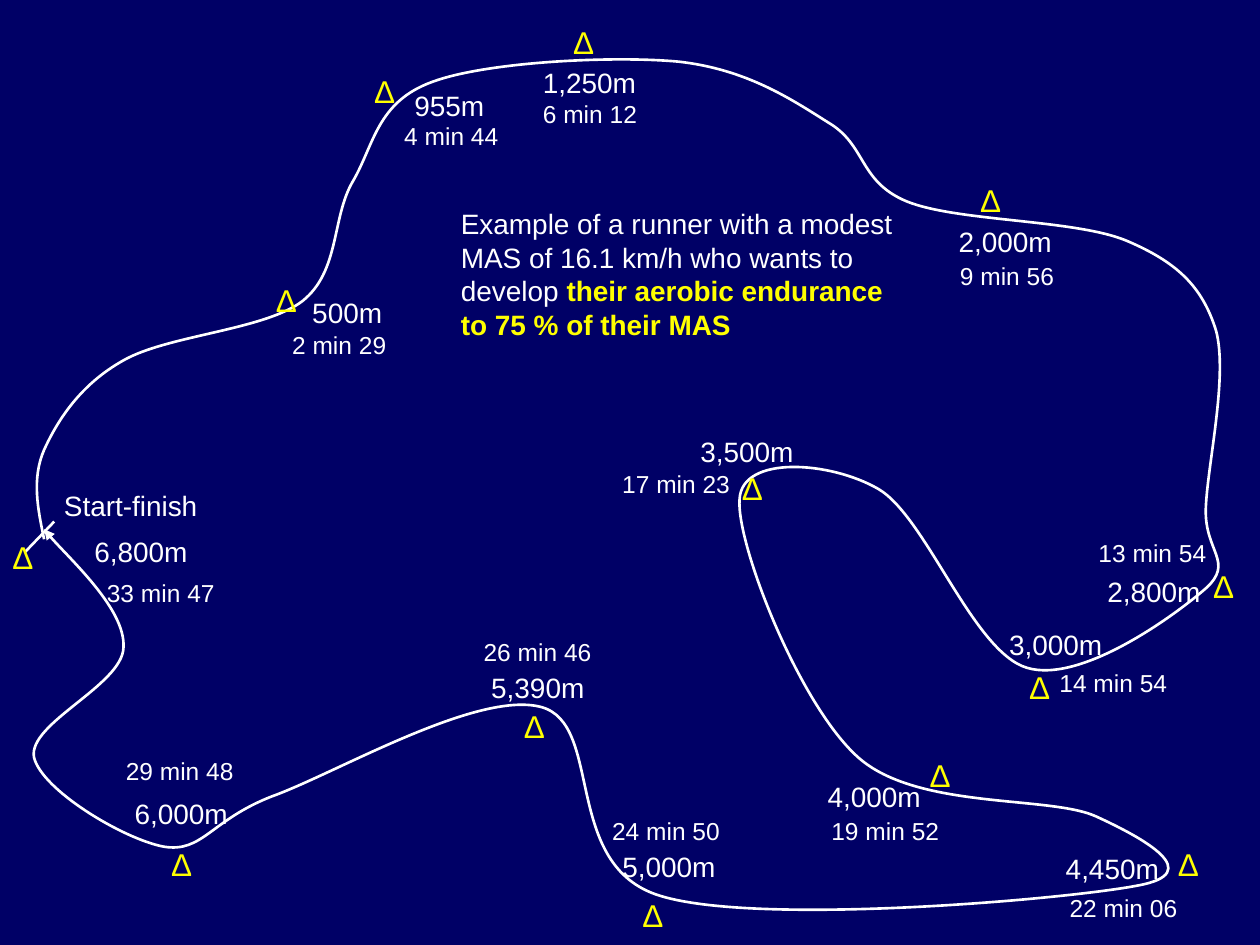
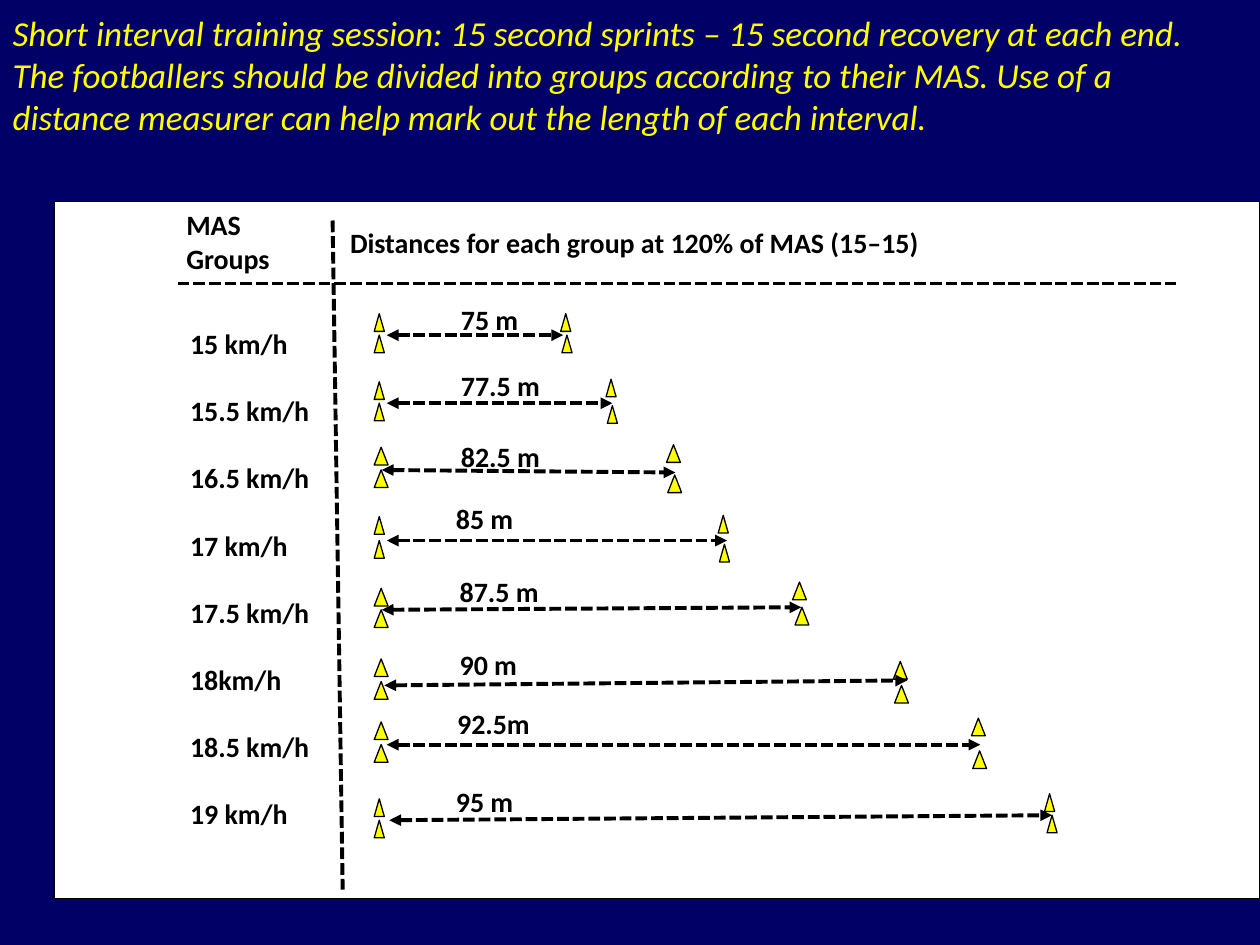
"""Build two slides on endurance and interval running at a share of MAS."""
from lxml import etree
from pptx import Presentation
from pptx.dml.color import RGBColor
from pptx.enum.dml import MSO_LINE
from pptx.enum.shapes import MSO_CONNECTOR, MSO_SHAPE
from pptx.enum.text import MSO_ANCHOR, MSO_AUTO_SIZE, PP_ALIGN
from pptx.oxml.ns import qn
from pptx.util import Cm, Pt

NAVY, WHITE, YELLOW, BLACK = "000066", "FFFFFF", "FFFF00", "000000"
LABEL_WIDTHS = {1: 0.35, 4: 0.76, 6: 0.95, 8: 0.95, 9: 1.06, 12: 1.26}
LABEL_HEIGHTS = {14: 0.33, 16: 0.37, 18: 0.4}

COURSE_START = (0.35, 4.28)
COURSE_CURVES = [
    (0.3, 4.04, 0.25, 3.8, 0.35, 3.57),
    (0.46, 3.33, 0.64, 3.05, 0.98, 2.86),
    (1.33, 2.66, 2.1, 2.62, 2.4, 2.39),
    (2.7, 2.15, 2.63, 1.73, 2.8, 1.44),
    (2.97, 1.15, 2.99, 0.81, 3.43, 0.65),
    (3.86, 0.49, 4.87, 0.44, 5.39, 0.49),
    (5.92, 0.55, 6.27, 0.78, 6.57, 0.97),
    (6.88, 1.15, 6.81, 1.44, 7.2, 1.6),
    (7.6, 1.76, 8.53, 1.74, 8.94, 1.91),
    (9.34, 2.08, 9.54, 2.27, 9.65, 2.62),
    (9.75, 2.98, 9.58, 3.7, 9.57, 4.04),
    (9.56, 4.38, 9.8, 4.46, 9.57, 4.67),
    (9.33, 4.88, 8.58, 5.43, 8.15, 5.3),
    (7.72, 5.17, 7.35, 4.1, 6.97, 3.88),
    (6.59, 3.66, 5.89, 3.61, 5.87, 3.96),
    (5.84, 4.31, 6.34, 5.59, 6.81, 6.01),
    (7.28, 6.43, 8.33, 6.31, 8.7, 6.48),
    (9.07, 6.65, 9.59, 6.93, 9.02, 7.03),
    (8.44, 7.14, 6.02, 7.35, 5.24, 7.11),
    (4.45, 6.87, 4.8, 5.74, 4.29, 5.61),
    (3.78, 5.48, 2.66, 6.14, 2.16, 6.32),
    (1.67, 6.51, 1.61, 6.77, 1.3, 6.72),
    (0.98, 6.66, 0.33, 6.27, 0.27, 6.01),
    (0.22, 5.74, 0.97, 5.44, 0.98, 5.14),
    (1, 4.84, 0.46, 4.35, 0.35, 4.2),
]

# distance, its place, time, its place, place of the marker
CHECKPOINTS = [
    ("500m", (2.38, 2.3), "2 min 29", (2.22, 2.57), (2.09, 2.18)),
    ("955m", (3.19, 0.65), "4 min 44", (3.11, 0.91), (2.87, 0.52)),
    ("1,250m", (4.21, 0.47), "6 min 12", (4.21, 0.74), (4.45, 0.13)),
    ("2,000m", (7.51, 1.73), "9 min 56", (7.52, 2.02), (7.68, 1.39)),
    ("2,800m", (8.69, 4.51), "13 min 54", (8.62, 4.22), (9.53, 4.45)),
    ("3,000m", (7.91, 4.93), "14 min 54", (8.31, 5.25), (8.07, 5.25)),
    ("3,500m", (5.46, 3.4), "17 min 23", (4.84, 3.67), (5.79, 3.67)),
    ("4,000m", (6.47, 6.14), "19 min 52", (6.5, 6.43), (7.28, 5.95)),
    ("4,450m", (8.36, 6.71), "22 min 06", (8.39, 7.04), (9.25, 6.66)),
    ("5,000m", (4.84, 6.69), "24 min 50", (4.76, 6.43), (5, 7.06)),
    ("5,390m", (3.8, 5.27), "26 min 46", (3.74, 5.01), (4.06, 5.56)),
    ("6,000m", (0.97, 6.27), "29 min 48", (0.9, 5.95), (1.26, 6.66)),
    ("6,800m", (0.65, 4.19), "33 min 47", (0.75, 4.54), (0, 4.22)),
]

# group, distance, its place, cone width, start cone tops, finish cones, arrow
SPRINTS = [
    ("15 km/h", "75 m", (3.56, 2.35), 0.08, (2.49, 2.66),
     ((4.45, 2.49), (4.46, 2.66)), (3.07, 2.66, 4.47, 2.66)),
    ("15.5 km/h", "77.5 m", (3.56, 2.88), 0.08, (3.03, 3.2),
     ((4.81, 3.01), (4.82, 3.22)), (3.07, 3.2, 4.86, 3.2)),
    ("16.5 km/h", "82.5 m", (3.56, 3.44), 0.11, (3.55, 3.73),
     ((5.29, 3.53), (5.3, 3.77)), (3.03, 3.73, 5.36, 3.75)),
    ("17 km/h", "85 m", (3.52, 3.93), 0.08, (4.1, 4.29),
     ((5.7, 4.09), (5.71, 4.32)), (3.07, 4.29, 5.77, 4.29)),
    ("17.5 km/h", "87.5 m", (3.55, 4.51), 0.11, (4.67, 4.84),
     ((6.29, 4.62), (6.31, 4.82)), (3.03, 4.84, 6.36, 4.82)),
    ("18km/h", "90 m", (3.55, 5.09), 0.11, (5.23, 5.41),
     ((7.09, 5.25), (7.1, 5.44)), (3.05, 5.44, 7.2, 5.4)),
    ("18.5 km/h", "92.5m", (3.53, 5.56), 0.11, (5.73, 5.91),
     ((7.71, 5.7), (7.72, 5.96)), (3.07, 5.91, 7.78, 5.91)),
    ("19 km/h", "95 m", (3.52, 6.18), 0.08, (6.34, 6.51),
     ((8.29, 6.3), (8.31, 6.47)), (3.09, 6.51, 8.35, 6.47)),
]


def lengths(*inches):
    """Turn inches into lengths given in centimetres."""
    return [Cm(2.54 * value) for value in inches]


def colour(hex_string):
    """Return the colour for a hex string."""
    return RGBColor.from_string(hex_string)


def style_runs(paragraph, size, ink, face, bold=False, italic=False):
    """Format every run of a paragraph alike."""
    for run in paragraph.runs:
        run.font.size, run.font.name = Pt(size), face
        run.font.bold, run.font.italic = bold, italic
        run.font.color.rgb = colour(ink)


def add_text(slide, text, box, size, ink, face="Arial", bold=False, wrap=False):
    """Add a text box, one paragraph a line, and return its frame."""
    frame = slide.shapes.add_textbox(*lengths(*box)).text_frame
    frame.word_wrap = wrap
    frame.auto_size = MSO_AUTO_SIZE.NONE if wrap else MSO_AUTO_SIZE.SHAPE_TO_FIT_TEXT
    frame.text = text
    for paragraph in frame.paragraphs:
        style_runs(paragraph, size, ink, face, bold)
    return frame


def add_label(slide, text, place, size, ink=WHITE):
    """Add a short label on the running course."""
    add_text(slide, text, (*place, LABEL_WIDTHS[len(text)], LABEL_HEIGHTS[size]), size, ink)


def add_heading(slide, text, box):
    """Add a bold black text to the interval chart."""
    add_text(slide, text, box, 16, BLACK, "Calibri", bold=True, wrap=True)


def add_arrowheads(shape, *ends):
    """Put triangles on the named ends of a line."""
    outline = shape.element.spPr.find(qn("a:ln"))
    for end in ends:
        etree.SubElement(outline, qn(f"a:{end}"), type="triangle")


def add_line(slide, ends, ink, weight, dashed=False, arrows=()):
    """Draw a straight line between two points."""
    line = slide.shapes.add_connector(MSO_CONNECTOR.STRAIGHT, *lengths(*ends))
    line.line.color.rgb = colour(ink)
    line.line.width = Pt(weight)
    if dashed:
        line.line.dash_style = MSO_LINE.SQUARE_DOT
    add_arrowheads(line, *arrows)
    etree.SubElement(line.element.spPr, qn("a:effectLst"))


def add_filled(slide, preset, box, fill, outlined=True):
    """Add a filled preset shape, with or without a thin black outline."""
    shape = slide.shapes.add_shape(preset, *lengths(*box))
    shape.shadow.inherit = False
    shape.fill.solid()
    shape.fill.fore_color.rgb = colour(fill)
    if outlined:
        shape.line.color.rgb = colour(BLACK)
        shape.line.width = Pt(0.75)
    else:
        shape.line.fill.background()
    return shape


def add_course(slide):
    """Draw the running course as one curved outline."""
    builder = slide.shapes.build_freeform(*lengths(*COURSE_START))
    points = [lengths(*curve[i:i + 2]) for curve in COURSE_CURVES for i in (0, 2, 4)]
    builder.add_line_segments(points, close=False)
    course = builder.convert_to_shape()
    path = next(course.element.iter(qn("a:path")))
    segments = path.findall(qn("a:lnTo"))
    for first in range(0, len(segments), 3):
        curve = etree.SubElement(path, qn("a:cubicBezTo"))
        for segment in segments[first:first + 3]:
            curve.append(segment[0])
            path.remove(segment)
    course.shadow.inherit = False
    course.fill.background()
    course.line.color.rgb = colour(WHITE)
    course.line.width = Pt(1.5)
    add_arrowheads(course, "tailEnd")


def add_runner_example(slide):
    """Add the example with its goal in bold yellow."""
    example = ("Example of a runner with a modest\vMAS of 16.1 km/h who wants to\n"
               "develop \nto 75 % of their MAS")
    frame = add_text(slide, example, (3.56, 1.59, 3.64, 1.17), 16, WHITE)
    goal_start, goal_end = frame.paragraphs[1:]
    style_runs(goal_end, 16, YELLOW, "Arial", bold=True)
    goal = goal_start.add_run()
    goal.text = "their aerobic endurance"
    goal.font.size, goal.font.name, goal.font.bold = Pt(16), "Arial", True
    goal.font.color.rgb = colour(YELLOW)


def add_groups(slide):
    """List the MAS groups down the left column."""
    column = add_filled(slide, MSO_SHAPE.RECTANGLE, (1.41, 2.01, 1.62, 4.81), WHITE, False)
    frame = column.text_frame
    frame.vertical_anchor = MSO_ANCHOR.TOP
    frame.margin_top = Cm(1.48)
    frame.text = "\n".join(sprint[0] for sprint in SPRINTS)
    for row, paragraph in enumerate(frame.paragraphs):
        paragraph.alignment = PP_ALIGN.LEFT
        if row:
            paragraph.space_before = Pt(19.2)
        style_runs(paragraph, 16, BLACK, "Calibri", bold=True)


def add_sprint(slide, distance, place, cone_width, start_tops, finish_cones, arrow):
    """Draw one group's cones, distance and two-way arrow."""
    for cone in [(2.97, top) for top in start_tops] + list(finish_cones):
        add_filled(slide, MSO_SHAPE.ISOSCELES_TRIANGLE, (*cone, cone_width, 0.14), YELLOW)
    add_heading(slide, distance, (*place, 0.9, 0.3))
    add_line(slide, arrow, BLACK, 2.25, dashed=True, arrows=("headEnd", "tailEnd"))


def add_session_title(slide):
    """Write the session description in the title placeholder."""
    title = slide.shapes.title
    title.left, title.top, title.width, title.height = lengths(0, 0.04, 9.88, 1.43)
    frame = title.text_frame
    frame.text = (
        "Short interval training session: 15 second sprints – 15 second recovery at each end.\n"
        "The footballers should be divided into groups according to their MAS. "
        "Use of a distance measurer can help mark out the length of each interval.")
    frame.word_wrap = True
    frame.auto_size = MSO_AUTO_SIZE.NONE
    frame.vertical_anchor = MSO_ANCHOR.TOP
    for paragraph in frame.paragraphs:
        paragraph.alignment = PP_ALIGN.LEFT
        style_runs(paragraph, 20, YELLOW, "Calibri", italic=True)


def build_course_slide(deck):
    """Build the slide with the running course."""
    slide = deck.slides.add_slide(deck.slide_layouts.get_by_name("Blank"))
    add_course(slide)
    add_label(slide, "Start-finish", (0.41, 3.83), 16)
    add_line(slide, (0.2, 4.38, 0.43, 4.14), WHITE, 1.5)
    for distance, distance_place, time, time_place, marker_place in CHECKPOINTS:
        add_label(slide, "Δ", marker_place, 18, YELLOW)
        add_label(slide, distance, distance_place, 16)
        add_label(slide, time, time_place, 14)
    add_runner_example(slide)


def build_interval_slide(deck):
    """Build the slide with the sprint distances of each group."""
    slide = deck.slides.add_slide(deck.slide_layouts.get_by_name("Title Only"))
    add_session_title(slide)
    add_filled(slide, MSO_SHAPE.RECTANGLE, (0.43, 1.6, 9.57, 5.53), WHITE)
    add_groups(slide)
    add_heading(slide, "MAS\vGroups", (1.38, 1.6, 1.19, 0.3))
    add_heading(slide, "Distances for each group at 120% of MAS (15–15)",
                (2.68, 1.74, 7.2, 0.3))
    for sprint in SPRINTS:
        add_sprint(slide, *sprint[1:])
    for rule in ((1.41, 2.25, 9.33, 2.25), (2.64, 1.75, 2.72, 7.06)):
        add_line(slide, rule, BLACK, 2.25, dashed=True)


def main():
    """Build and save the deck."""
    deck = Presentation()
    deck.slide_width, deck.slide_height = lengths(10, 7.5)
    backdrop = deck.slide_master.background.fill
    backdrop.solid()
    backdrop.fore_color.rgb = colour(NAVY)
    build_course_slide(deck)
    build_interval_slide(deck)
    deck.save("out.pptx")


if __name__ == "__main__":
    main()
